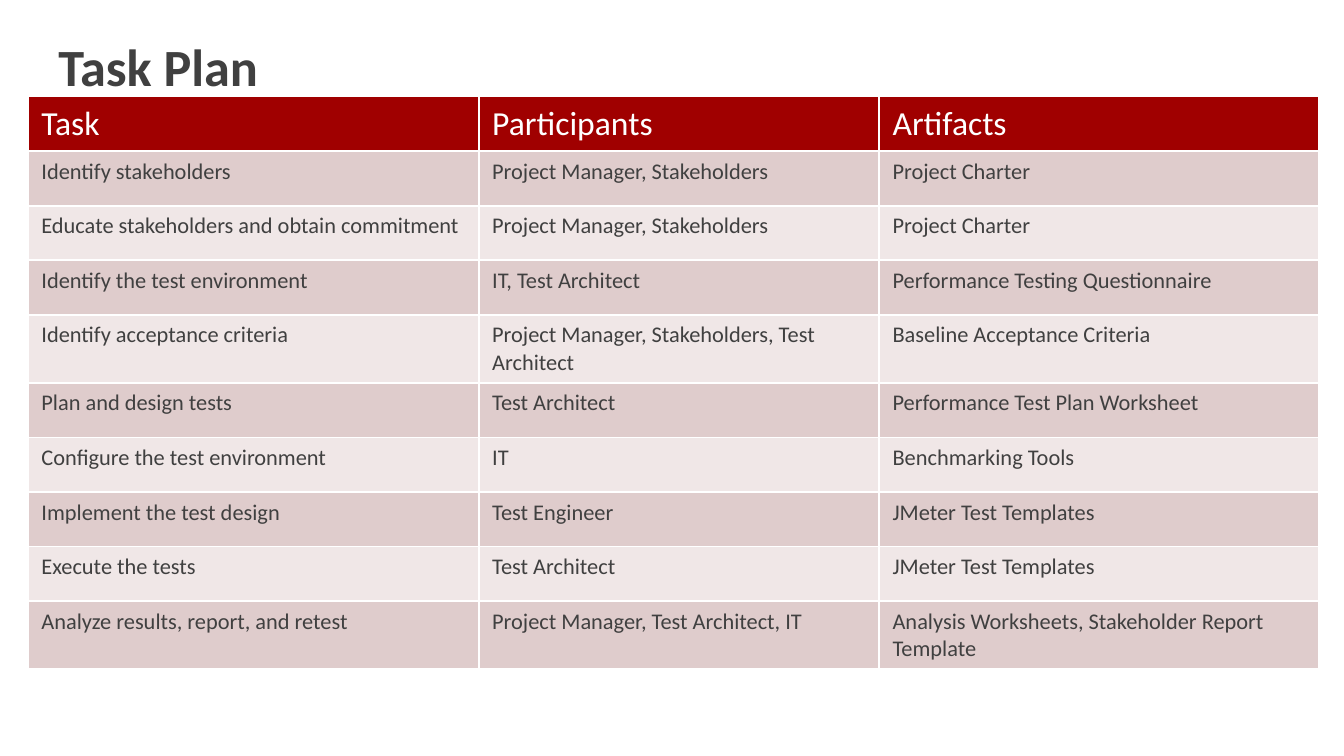
from lxml.etree import SubElement
from pptx import Presentation
from pptx.dml.color import RGBColor
from pptx.enum.text import MSO_ANCHOR, PP_ALIGN
from pptx.oxml.ns import qn
from pptx.util import Pt

PX = 9525
FONT = "Calibri"
WHITE = RGBColor(0xFF, 0xFF, 0xFF)
CHARCOAL = RGBColor(0x40, 0x40, 0x40)
CRIMSON = RGBColor(0xA0, 0x00, 0x00)
ROSE = RGBColor(0xDF, 0xCC, 0xCC)
PALE_ROSE = RGBColor(0xF0, 0xE7, 0xE7)

COLUMN_WIDTHS = [322, 286, 314]
TASK_ROWS = [
    ("Task", "Participants", "Artifacts"),
    ("Identify stakeholders", "Project Manager, Stakeholders", "Project Charter"),
    ("Educate stakeholders and obtain commitment", "Project Manager, Stakeholders", "Project Charter"),
    ("Identify the test environment", "IT, Test Architect", "Performance Testing Questionnaire"),
    ("Identify acceptance criteria", "Project Manager, Stakeholders, Test Architect", "Baseline Acceptance Criteria"),
    ("Plan and design tests", "Test Architect", "Performance Test Plan Worksheet"),
    ("Configure the test environment", "IT", "Benchmarking Tools"),
    ("Implement the test design", "Test Engineer", "JMeter Test Templates"),
    ("Execute the tests", "Test Architect", "JMeter Test Templates"),
    ("Analyze results, report, and retest", "Project Manager, Test Architect, IT",
     "Analysis Worksheets, Stakeholder Report Template"),
]


def px(length):
    return length * PX


def style_font(font, size, color, bold=False):
    font.name = FONT
    font.size = Pt(size)
    font.bold = bold
    font.color.rgb = color


def add_borders(cell):
    properties = cell._tc.get_or_add_tcPr()
    for side in "LRTB":
        line = SubElement(properties, qn(f"a:ln{side}"), w=str(Pt(1)))
        fill = SubElement(line, qn("a:solidFill"))
        SubElement(fill, qn("a:srgbClr"), val=str(WHITE))


def place_title(slide, left, top, width, height):
    title = slide.shapes.title
    title.left, title.top = px(left), px(top)
    title.width, title.height = px(width), px(height)
    frame = title.text_frame
    frame.text = "Task Plan"
    frame.vertical_anchor = MSO_ANCHOR.MIDDLE
    heading = frame.paragraphs[0]
    heading.alignment = PP_ALIGN.LEFT
    style_font(heading.runs[0].font, 28, CHARCOAL, bold=True)


def place_task_table(slide, left, top, row_height):
    plan = slide.shapes.add_table(
        len(TASK_ROWS), len(COLUMN_WIDTHS), px(left), px(top),
        px(sum(COLUMN_WIDTHS)), px(row_height * len(TASK_ROWS))).table
    for column, width in zip(plan.columns, COLUMN_WIDTHS):
        column.width = px(width)
    for index, (row, entries) in enumerate(zip(plan.rows, TASK_ROWS)):
        is_header = index == 0
        band = CRIMSON if is_header else ROSE if index % 2 else PALE_ROSE
        for cell, entry in zip(row.cells, entries):
            cell.text = entry
            add_borders(cell)
            cell.fill.solid()
            cell.fill.fore_color.rgb = band
            style_font(cell.text_frame.paragraphs[0].runs[0].font,
                       18 if is_header else 12,
                       WHITE if is_header else CHARCOAL)


def main():
    deck = Presentation()
    deck.slide_width, deck.slide_height = px(960), px(540)
    slide = deck.slides.add_slide(deck.slide_layouts[5])
    place_title(slide, 32, 22, 896, 50)
    place_task_table(slide, 20, 69, 39)
    deck.save("out.pptx")


if __name__ == "__main__":
    main()
